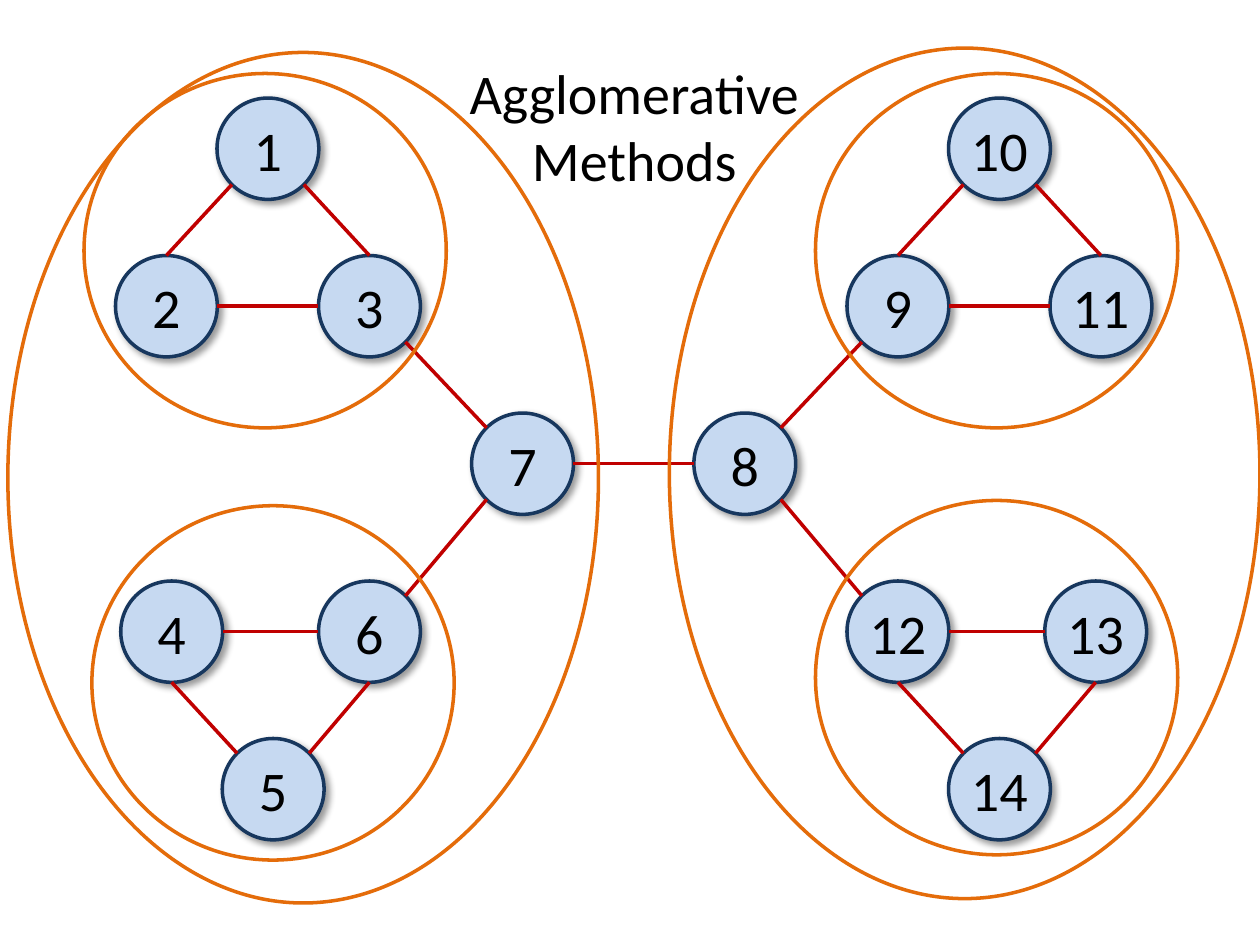
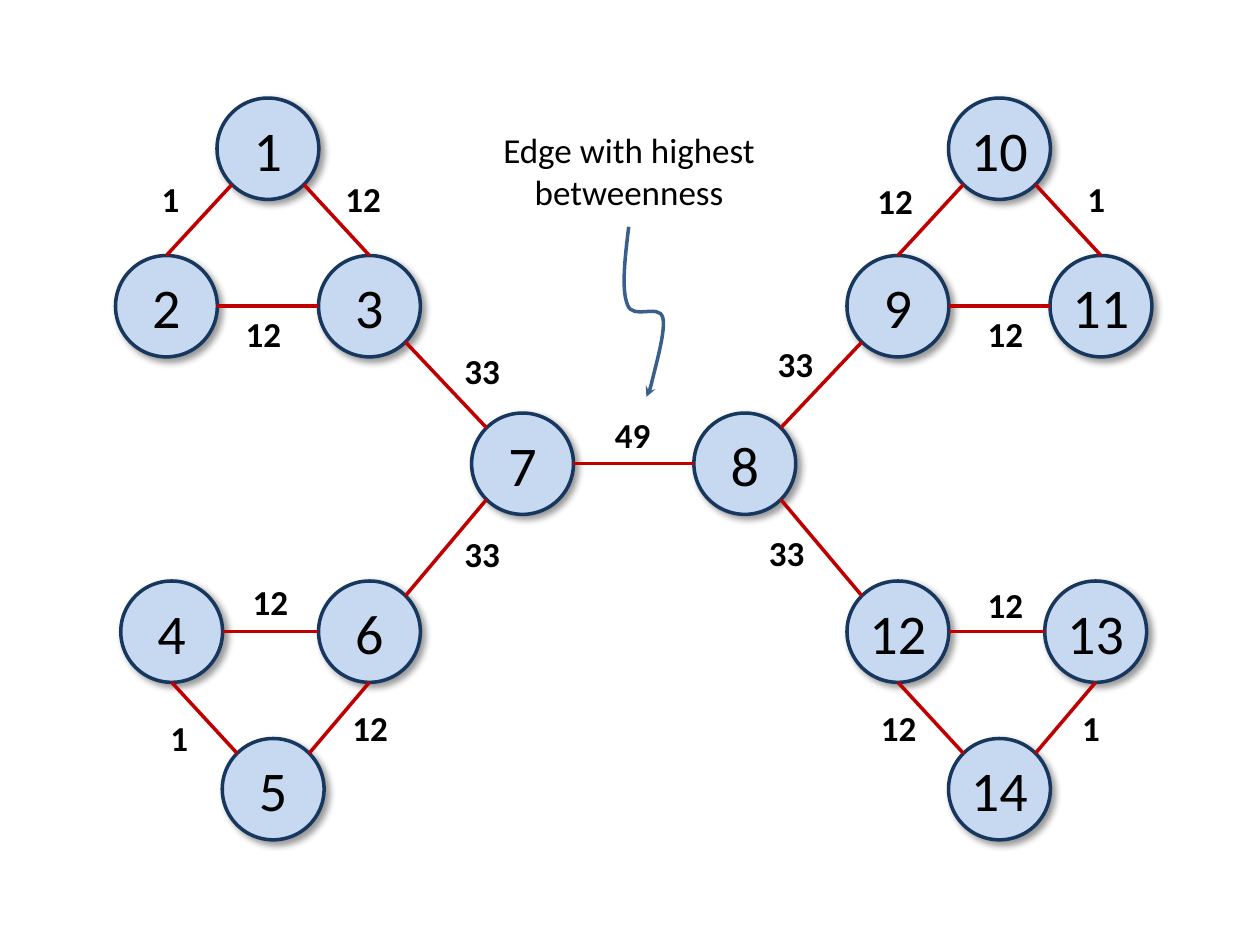
from math import sqrt

from lxml.etree import SubElement
from pptx import Presentation
from pptx.dml.color import RGBColor
from pptx.enum.shapes import MSO_CONNECTOR, MSO_SHAPE
from pptx.enum.text import MSO_ANCHOR, MSO_AUTO_SIZE, PP_ALIGN
from pptx.oxml.ns import qn
from pptx.util import Pt

NODE_WIDTH, NODE_HEIGHT = 58.2, 57.9
DIAGONAL = sqrt(0.5)
SIDES = {
    "N": (0, -1), "S": (0, 1), "W": (-1, 0), "E": (1, 0),
    "NW": (-DIAGONAL, -DIAGONAL), "NE": (DIAGONAL, -DIAGONAL),
    "SW": (-DIAGONAL, DIAGONAL), "SE": (DIAGONAL, DIAGONAL),
}
NODES = {
    1: (124, 56), 2: (66, 146), 3: (182, 146),
    4: (69, 332), 5: (127, 422), 6: (182, 332),
    7: (269.5, 236), 8: (396.5, 236),
    9: (484, 146), 10: (542, 56), 11: (600, 146),
    12: (484, 332), 13: (597, 332), 14: (542, 422),
}
EDGES = [
    (1, "SW", 2, "N", 1, (74, 98)),
    (3, "N", 1, "SE", 12, (184, 98)),
    (3, "W", 2, "E", 12, (127, 175)),
    (10, "SW", 9, "N", 12, (488, 99)),
    (11, "N", 10, "SE", 1, (603, 98)),
    (11, "W", 9, "E", 12, (551, 175)),
    (5, "NW", 4, "S", 1, (79, 406)),
    (6, "S", 5, "NE", 12, (188, 400)),
    (6, "W", 4, "E", 12, (131, 328)),
    (14, "NW", 12, "S", 12, (490, 400)),
    (13, "S", 14, "NE", 1, (600, 400)),
    (13, "W", 12, "E", 12, (551, 330)),
    (7, "NW", 3, "SE", 33, (252, 196)),
    (7, "SW", 6, "NE", 33, (252, 301)),
    (8, "W", 7, "E", 49, (338, 233)),
    (8, "NE", 9, "SW", 33, (431, 192)),
    (12, "NW", 8, "SE", 33, (426, 300)),
]
SMALL_CLUSTERS = [(48, 42), (466, 42), (52.5, 289), (466, 286)]
LARGE_CLUSTERS = [(4.5, 30), (382.5, 27.5)]
POINTER = [
    (369.4, 226.8), (369.4, 227.5), (370, 227.5), (372.2, 219.6),
    (373.7, 212.4), (380.9, 188.6), (378.7, 181.4), (376.6, 173.5),
    (361.4, 182.9), (358.6, 174.2), (355, 165.6), (357.1, 147.6),
    (359.3, 129.6),
]


def color(value):
    return RGBColor.from_string(value)


class Deck:
    font = "Calibri"
    ink = "000000"
    node_fill = "C6D9F1"
    node_line = "17375E"
    edge_line = "C00000"
    cluster_line = "E46C0A"
    pointer_line = "3A5F8C"

    def __init__(self):
        self.presentation = Presentation()
        self.presentation.slide_width = Pt(720)
        self.presentation.slide_height = Pt(540)

    def add_slide(self):
        self.slide = self.presentation.slides.add_slide(self.presentation.slide_layouts[6])
        self.shapes = self.slide.shapes

    def start_group(self):
        self.shapes = self.slide.shapes.add_group_shape().shapes

    def outline(self, shape, line_color):
        shape.line.color.rgb = color(line_color)
        shape.line.width = Pt(2)

    def set_text(self, shape, text, size, bold=False):
        frame = shape.text_frame
        frame.word_wrap = True
        frame.text = text
        for paragraph in frame.paragraphs:
            paragraph.alignment = PP_ALIGN.CENTER
            for run in paragraph.runs:
                run.font.name = self.font
                run.font.size = Pt(size)
                run.font.bold = bold
                run.font.color.rgb = color(self.ink)

    def text(self, left, top, width, height, text, size, bold=False):
        box = self.shapes.add_textbox(Pt(left), Pt(top), Pt(width), Pt(height))
        self.set_text(box, text, size, bold)
        box.text_frame.auto_size = MSO_AUTO_SIZE.SHAPE_TO_FIT_TEXT

    def ellipse(self, left, top, width, height, line_color):
        shape = self.shapes.add_shape(MSO_SHAPE.OVAL, Pt(left), Pt(top), Pt(width), Pt(height))
        shape.shadow.inherit = False
        shape.fill.background()
        self.outline(shape, line_color)
        return shape

    def node(self, number):
        shape = self.ellipse(*NODES[number], NODE_WIDTH, NODE_HEIGHT, self.node_line)
        shape.fill.solid()
        shape.fill.fore_color.rgb = color(self.node_fill)
        self.set_text(shape, str(number), 32)
        frame = shape.text_frame
        frame.vertical_anchor = MSO_ANCHOR.MIDDLE
        frame.margin_left = frame.margin_right = Pt(0)
        effects = shape.element.spPr.find(qn("a:effectLst"))
        shadow = SubElement(
            effects, qn("a:outerShdw"), blurRad=str(Pt(4)), dist=str(Pt(3)),
            dir="2700000", algn="tl", rotWithShape="0")
        shade = SubElement(shadow, qn("a:srgbClr"), val=self.ink)
        SubElement(shade, qn("a:alpha"), val="40000")

    def edge(self, start, start_side, end, end_side):
        points = []
        for number, side in ((start, start_side), (end, end_side)):
            left, top = NODES[number]
            across, down = SIDES[side]
            points += [Pt(left + NODE_WIDTH / 2 * (1 + across)),
                       Pt(top + NODE_HEIGHT / 2 * (1 + down))]
        connector = self.shapes.add_connector(MSO_CONNECTOR.STRAIGHT, *points)
        self.outline(connector, self.edge_line)
        SubElement(connector.element.spPr, qn("a:effectLst"))

    def network(self):
        for number in NODES:
            self.node(number)
        for start, start_side, end, end_side, *_ in EDGES:
            self.edge(start, start_side, end, end_side)

    def curved_arrow(self, points):
        first, *others = [(Pt(x), Pt(y)) for x, y in points]
        builder = self.shapes.build_freeform(*first)
        builder.add_line_segments(others, close=False)
        shape = builder.convert_to_shape()
        shape.shadow.inherit = False
        shape.fill.background()
        self.outline(shape, self.pointer_line)
        properties = shape.element.spPr
        SubElement(properties.find(qn("a:ln")), qn("a:headEnd"), type="stealth")
        outline = next(properties.iter(qn("a:path")))
        segments = outline.findall(qn("a:lnTo"))
        for index in range(0, len(segments), 3):
            curve = SubElement(outline, qn("a:cubicBezTo"))
            for segment in segments[index:index + 3]:
                curve.append(segment[0])
                outline.remove(segment)


def agglomerative_methods(deck):
    deck.add_slide()
    deck.network()
    deck.text(235, 30, 255, 85, "Agglomerative\vMethods", 32)
    for left, top in SMALL_CLUSTERS:
        deck.ellipse(left, top, 207, 202.5, deck.cluster_line)
    for left, top in LARGE_CLUSTERS:
        deck.ellipse(left, top, 337.5, 486, deck.cluster_line)


def edge_betweenness(deck):
    deck.add_slide()
    deck.text(245, 70, 229, 55.5, "Edge with highest betweenness", 20)
    for *_, weight, (left, top) in EDGES:
        deck.text(left, top, 47, 31.5, str(weight), 20, bold=True)
    deck.curved_arrow(POINTER)
    deck.start_group()
    deck.network()


def main():
    deck = Deck()
    agglomerative_methods(deck)
    edge_betweenness(deck)
    deck.presentation.save("out.pptx")


if __name__ == "__main__":
    main()
